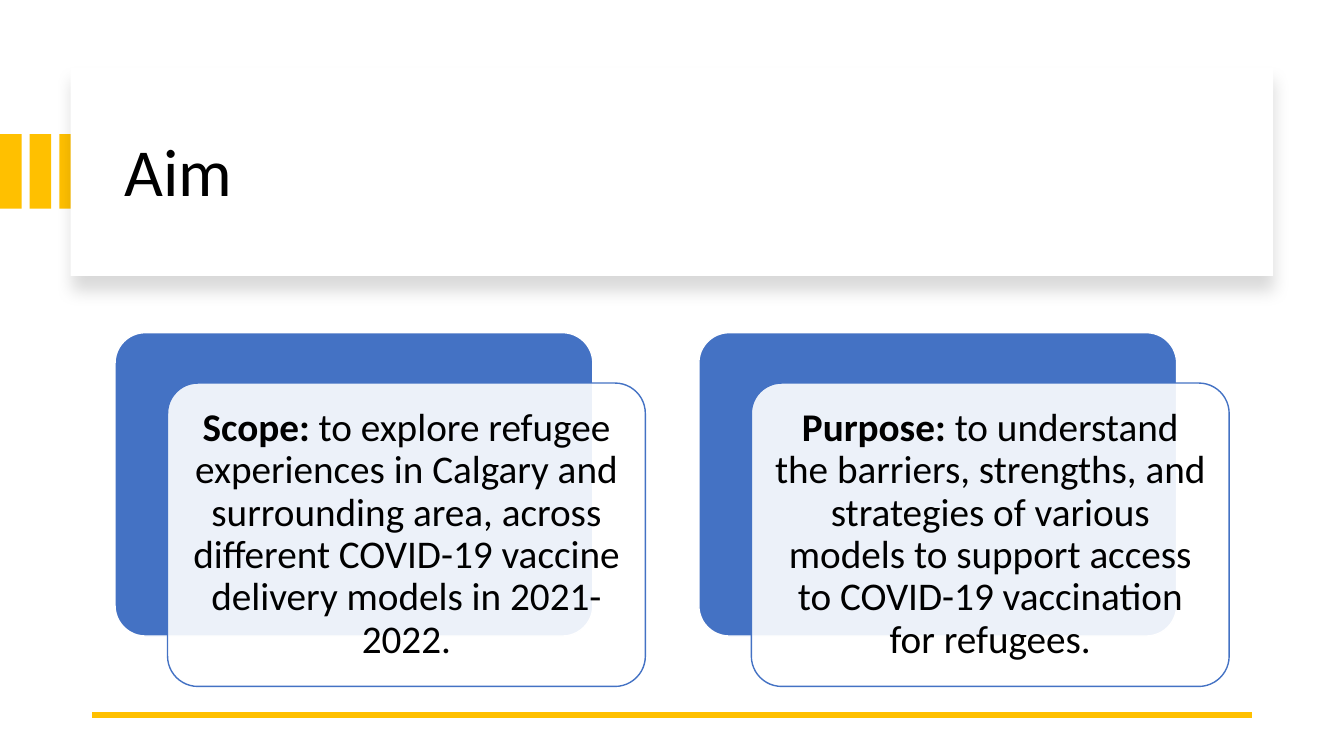
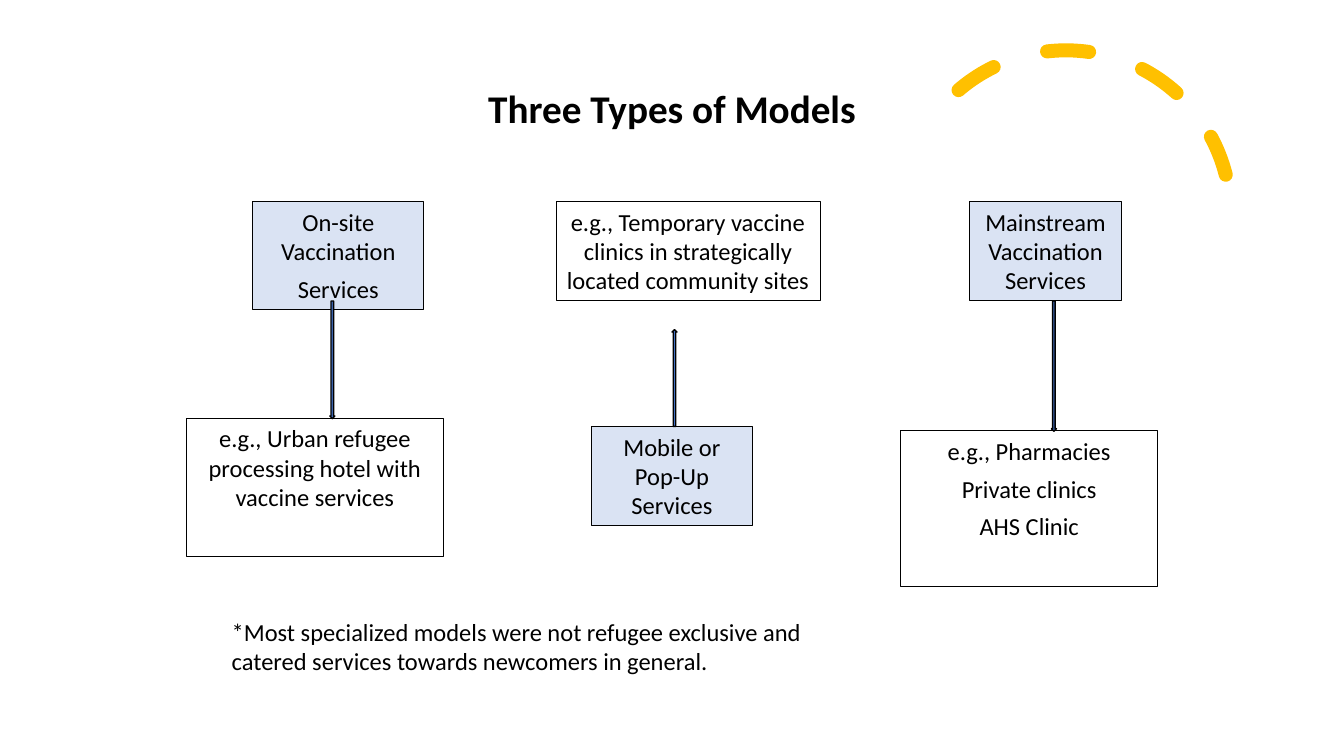
from lxml import etree
from pptx import Presentation
from pptx.dml.color import RGBColor
from pptx.enum import dml, shapes, text
from pptx.oxml import ns
from pptx.util import Pt

GOLD = RGBColor(0xFF, 0xC0, 0x00)
BLUE = RGBColor(0x44, 0x72, 0xC4)
PALE_BLUE = RGBColor(0xDA, 0xE3, 0xF3)
WHITE = RGBColor(0xFF, 0xFF, 0xFF)
BLACK = RGBColor(0x00, 0x00, 0x00)
FONT = "Calibri"

SHAPE = shapes.MSO_SHAPE
ANCHOR = text.MSO_ANCHOR
ALIGN = text.PP_ALIGN


def add_xml(parent, tag, **attributes):
    return etree.SubElement(parent, ns.qn(tag), attributes)


def write_text(shape, content, size=17.5, lead="", bold=False, align=ALIGN.CENTER,
               anchor=ANCHOR.TOP, spacing=None, after=0, inset=None):
    """Write one paragraph per line of content; lead is a bold opening."""
    frame = shape.text_frame
    frame.word_wrap = True
    frame.vertical_anchor = anchor
    if inset is not None:
        frame.margin_left = frame.margin_right = Pt(inset)
        frame.margin_top = frame.margin_bottom = Pt(inset)
    for index, line in enumerate(content.split("\n")):
        paragraph = frame.add_paragraph() if index else frame.paragraphs[0]
        paragraph.alignment = align
        paragraph.space_after = Pt(after)
        if spacing:
            paragraph.line_spacing = spacing
        pieces = [(line, bold)]
        if lead and index == 0:
            pieces.insert(0, (lead, True))
        for piece, is_bold in pieces:
            run = paragraph.add_run()
            run.text = piece
            run.font.name = FONT
            run.font.size = Pt(size)
            run.font.bold = is_bold
            run.font.color.rgb = BLACK


class Deck:
    def __init__(self):
        self.presentation = Presentation()
        self.presentation.slide_width = Pt(960)
        self.presentation.slide_height = Pt(540)
        self.slide = None

    def new_slide(self):
        self.slide = self.presentation.slides.add_slide(self.presentation.slide_layouts[6])

    def shape(self, kind, left, top, width, height, fill=None, line=None, line_width=1):
        shape = self.slide.shapes.add_shape(kind, Pt(left), Pt(top), Pt(width), Pt(height))
        shape.shadow.inherit = False
        if fill is None:
            shape.fill.background()
        else:
            shape.fill.solid()
            shape.fill.fore_color.rgb = fill
        if line is None:
            shape.line.fill.background()
        else:
            shape.line.color.rgb = line
            shape.line.width = Pt(line_width)
        return shape

    def text_box(self, content, left, top, width, height, **style):
        box = self.slide.shapes.add_textbox(Pt(left), Pt(top), Pt(width), Pt(height))
        write_text(box, content, **style)

    def title(self, content, left, top, width, height, **style):
        self.text_box(content, left, top, width, height,
                      anchor=ANCHOR.MIDDLE, spacing=0.9, **style)

    def shadowed_panel(self, left, top, width, height):
        panel = self.shape(SHAPE.RECTANGLE, left, top, width, height, WHITE)
        effects = panel._element.spPr.find(ns.qn("a:effectLst"))
        shadow = add_xml(effects, "a:outerShdw", blurRad=str(Pt(11)), dist=str(Pt(10)),
                         dir="5400000", algn="t", rotWithShape="0")
        color = add_xml(shadow, "a:srgbClr", val=str(BLACK))
        add_xml(color, "a:alpha", val="15000")

    def rule(self, left, right, y):
        rule = self.slide.shapes.add_connector(
            shapes.MSO_CONNECTOR.STRAIGHT, Pt(left), Pt(y), Pt(right), Pt(y))
        rule.line.color.rgb = GOLD
        rule.line.width = Pt(4.5)
        add_xml(rule._element.spPr, "a:effectLst")

    def layered_card(self, left, top, lead, content):
        width, height = 341.3, 216.7
        back = self.shape(SHAPE.ROUNDED_RECTANGLE, left, top, width, height, BLUE, WHITE)
        front = self.shape(SHAPE.ROUNDED_RECTANGLE, left + 37.5, top + 36, width, height,
                           WHITE, BLUE)
        for card in (back, front):
            card.adjustments[0] = 0.1
        color = front._element.spPr.find(ns.qn("a:solidFill"))[0]
        add_xml(color, "a:alpha", val="90000")
        write_text(front, content, size=28, lead=lead, anchor=ANCHOR.MIDDLE,
                   spacing=0.9, inset=8.7)

    def model_box(self, content, left, top, width, height, fill):
        box = self.shape(SHAPE.RECTANGLE, left, top, width, height, fill, BLACK, 0.75)
        write_text(box, content, after=6)

    def block_arrow(self, kind, left, top, height):
        self.shape(kind, left, top, 3.6, height, BLUE, BLACK)

    def dashed_arc(self, left, top, size):
        arc = self.shape(SHAPE.ARC, left, top, size, size, line=GOLD, line_width=10)
        arc.adjustments[0] = 146.13
        arc.rotation = 345.8
        arc.line.dash_style = dml.MSO_LINE.DASH
        arc.line._get_or_add_ln().set("cap", "rnd")


def build_aim(deck):
    deck.new_slide()
    # Title band
    for bar in range(3):
        deck.shape(SHAPE.RECTANGLE, 21.2 * bar, 95.8, 15.4, 53.2, GOLD)
    deck.shadowed_panel(50.5, 48.2, 859, 149)
    deck.title("Aim", 82, 64, 801, 122, size=48, align=ALIGN.LEFT)
    deck.rule(66, 894, 510.5)
    # Scope and purpose
    cards = [
        ("Scope: ", "to explore refugee experiences in Calgary and surrounding area, across "
                    "different COVID-19 vaccine delivery models in 2021-2022."),
        ("Purpose: ", "to understand the barriers, strengths, and strategies of various "
                      "models to support access to COVID-19 vaccination for refugees."),
    ]
    for column, (lead, content) in enumerate(cards):
        deck.layered_card(82.2 + 417 * column, 237.6, lead, content)


def build_models(deck):
    deck.new_slide()
    # Heading
    deck.dashed_arc(643.7, 36, 235.5)
    deck.title("Three Types of Models", 66, 27, 828, 104, size=28, bold=True)
    # Models and their examples
    boxes = [
        ("On-site Vaccination\nServices", 180.7, 144, 122, 77, PALE_BLUE),
        ("Mobile or Pop-Up Services", 422.5, 304.8, 115, 70.6, PALE_BLUE),
        ("Mainstream Vaccination Services", 692.5, 144, 108.7, 70.6, PALE_BLUE),
        ("e.g., Urban refugee processing hotel with vaccine services",
         133.2, 298.8, 183.6, 98.6, WHITE),
        ("e.g., Temporary vaccine clinics in strategically located community sites",
         397.2, 144, 188.6, 70.6, WHITE),
        ("e.g., Pharmacies\nPrivate clinics\nAHS Clinic", 643.4, 307.8, 183.6, 110.8, WHITE),
    ]
    for box in boxes:
        deck.model_box(*box)
    # Arrows from model to example
    deck.block_arrow(SHAPE.DOWN_ARROW, 235.6, 215, 84)
    deck.block_arrow(SHAPE.UP_ARROW, 480, 235.4, 69.2)
    deck.block_arrow(SHAPE.DOWN_ARROW, 751, 215, 93)
    # Footnote
    deck.text_box("*Most specialized models were not refugee exclusive and catered services "
                  "towards newcomers in general.", 158.4, 437, 467, 50,
                  align=ALIGN.LEFT, after=6)


def main():
    deck = Deck()
    build_aim(deck)
    build_models(deck)
    deck.presentation.save("out.pptx")


if __name__ == "__main__":
    main()
